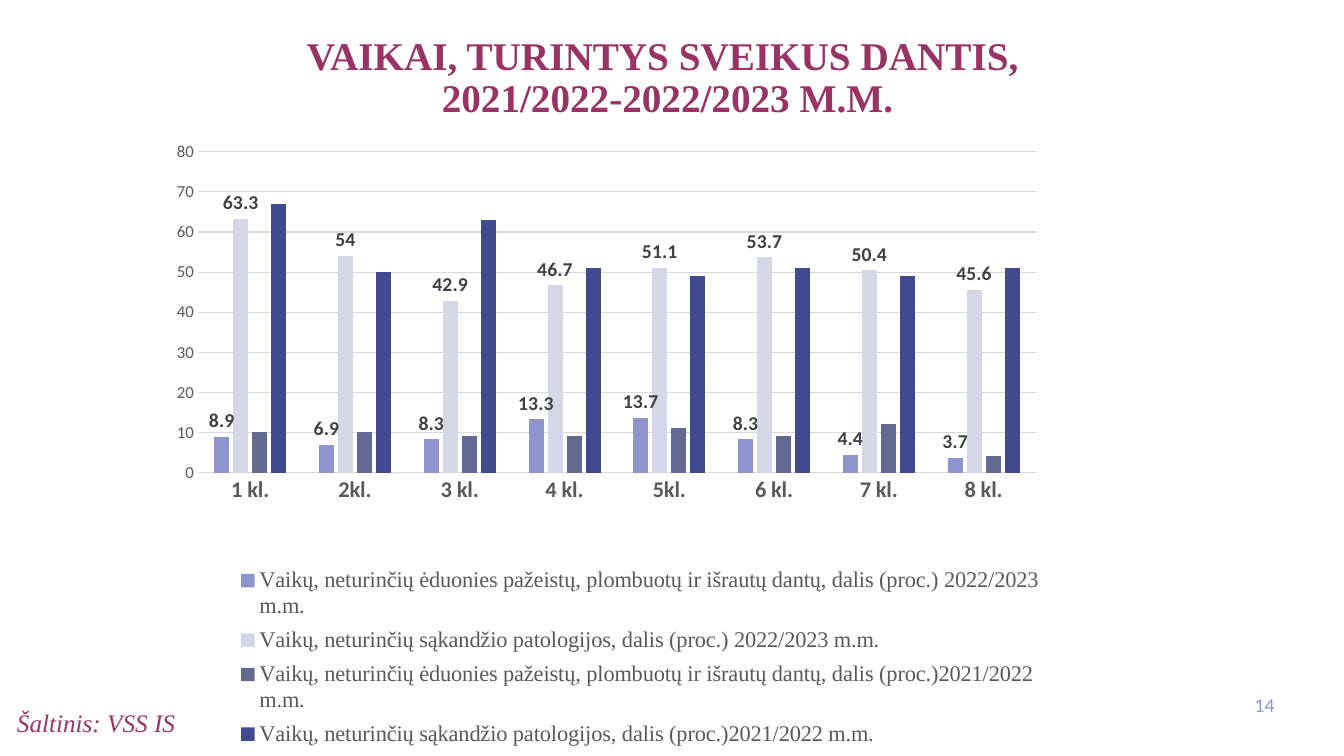
from lxml import etree
from pptx import Presentation
from pptx.chart.data import CategoryChartData
from pptx.dml.color import RGBColor
from pptx.enum.chart import XL_CHART_TYPE as ChartType
from pptx.enum.chart import XL_LABEL_POSITION as LabelPosition
from pptx.enum.chart import XL_LEGEND_POSITION as LegendPosition
from pptx.enum.chart import XL_TICK_MARK as TickMark
from pptx.enum.text import MSO_ANCHOR as Anchor
from pptx.enum.text import PP_ALIGN as Align
from pptx.oxml.ns import qn
from pptx.util import Inches, Pt

SERIF, SANS = "Times New Roman", "Calibri"
PLUM, GRAY, GRID = "993366", "595959", "D9D9D9"
CLASSES = ["1 kl.", "2kl.", "3 kl.", "4 kl.", "5kl.", "6 kl.", "7 kl.", "8 kl."]
CARIES_FREE = "Vaikų, neturinčių ėduonies pažeistų, plombuotų ir išrautų dantų, dalis (proc.)"
GOOD_BITE = "Vaikų, neturinčių sąkandžio patologijos, dalis (proc.)"
SHARES = [
    (CARIES_FREE + " 2022/2023 m.m.", "8D95CC", [8.9, 6.9, 8.3, 13.3, 13.7, 8.3, 4.4, 3.7]),
    (GOOD_BITE + " 2022/2023 m.m.", "D5D7E8", [63.3, 54, 42.9, 46.7, 51.1, 53.7, 50.4, 45.6]),
    (CARIES_FREE + "2021/2022 m.m.", "626A92", [10, 10, 9, 9, 11, 9, 12, 4]),
    (GOOD_BITE + "2021/2022 m.m.", "404A8F", [67, 50, 63, 51, 49, 51, 49, 51]),
]
LABELLED_SERIES = 2


def color(value):
    return RGBColor.from_string(value)


def style_font(font, size, face, tone, bold=False, italic=False):
    font.size, font.name = Pt(size), face
    font.color.rgb = color(tone)
    font.bold, font.italic = bold, italic


def style_line(line, tone):
    line.color.rgb = color(tone)
    line.width = Pt(0.75)


def set_layout(parent, x, y, width, height, target=None):
    old = parent.find(qn("c:layout"))
    if old is not None:
        parent.remove(old)
    layout = etree.Element(qn("c:layout"))
    manual = etree.SubElement(layout, qn("c:manualLayout"))
    settings = [("layoutTarget", target)] if target else []
    settings += [("xMode", "edge"), ("yMode", "edge"),
                 ("x", x), ("y", y), ("w", width), ("h", height)]
    for tag, value in settings:
        etree.SubElement(manual, qn("c:" + tag)).set("val", str(value))
    return layout


def add_title(slide, left, top, width, height):
    title = slide.shapes.title
    title.left, title.top = Inches(left), Inches(top)
    title.width, title.height = Inches(width), Inches(height)
    frame = title.text_frame
    frame.text = "VAIKAI, TURINTYS SVEIKUS DANTIS, \v2021/2022-2022/2023 M.M."
    frame.word_wrap = True
    frame.vertical_anchor = Anchor.TOP
    heading = frame.paragraphs[0]
    heading.alignment = Align.CENTER
    heading.line_spacing = 0.9
    style_font(heading.font, 28, SERIF, PLUM, bold=True)


def add_note(slide, box, text, align, size, face, tone, italic=False):
    frame = slide.shapes.add_textbox(*map(Inches, box)).text_frame
    frame.text = text
    frame.word_wrap = True
    frame.vertical_anchor = Anchor.MIDDLE
    note = frame.paragraphs[0]
    note.alignment = align
    style_font(note.font, size, face, tone, italic=italic)


def style_axes(chart):
    classes, percent = chart.category_axis, chart.value_axis
    for axis in (classes, percent):
        axis.major_tick_mark = axis.minor_tick_mark = TickMark.NONE
    style_font(classes.tick_labels.font, 16, SANS, GRAY, bold=True)
    style_line(classes.format.line, GRID)
    style_font(percent.tick_labels.font, 12, SANS, GRAY)
    percent.minimum_scale, percent.maximum_scale, percent.major_unit = 0, 80, 10
    percent.format.line.fill.background()
    percent.has_major_gridlines = True
    style_line(percent.major_gridlines.format.line, GRID)


def add_shares_chart(slide, left, top, width, height):
    data = CategoryChartData()
    data.categories = CLASSES
    for name, _, values in SHARES:
        data.add_series(name, values)
    chart = slide.shapes.add_chart(
        ChartType.COLUMN_CLUSTERED, *map(Inches, (left, top, width, height)), data).chart
    chart.has_title = False
    style_font(chart.font, 10, SANS, "000000")
    style_axes(chart)

    plot = chart.plots[0]
    plot.gap_width, plot.overlap = 219, -27
    plot.vary_by_categories = False
    for index, (series, share) in enumerate(zip(plot.series, SHARES)):
        series.format.fill.solid()
        series.format.fill.fore_color.rgb = color(share[1])
        if index < LABELLED_SERIES:
            labels = series.data_labels
            labels.show_value = True
            labels.position = LabelPosition.OUTSIDE_END
            style_font(labels.font, 14, SANS, "404040", bold=True)

    chart.has_legend = True
    legend = chart.legend
    legend.position = LegendPosition.BOTTOM
    legend.include_in_layout = False
    style_font(legend.font, 16, SERIF, GRAY)
    legend_xml = legend._element
    legend_layout = set_layout(legend_xml, 0.12, 0.68, 0.8, 0.32)
    legend_xml.find(qn("c:legendPos")).addnext(legend_layout)
    plot_area = chart._chartSpace.chart.plotArea
    plot_area.insert(0, set_layout(plot_area, 0.096, 0.019, 0.804, 0.521, "inner"))


def build_slide(deck):
    slide = deck.slides.add_slide(deck.slide_layouts[5])
    add_title(slide, -0.09, 0.31, 13.42, 1.19)
    add_note(slide, (0.07, 6.98, 6.3, 0.38), "Šaltinis: VSS IS",
             Align.LEFT, 18, SERIF, PLUM, italic=True)
    add_note(slide, (12.22, 6.79, 0.52, 0.4), "14", Align.RIGHT, 14, SANS, "8E96CD")
    add_shares_chart(slide, 0.97, 1.39, 10.34, 6.11)


def main():
    deck = Presentation()
    deck.slide_width, deck.slide_height = Inches(13.33), Inches(7.5)
    build_slide(deck)
    deck.save("out.pptx")


if __name__ == "__main__":
    main()
